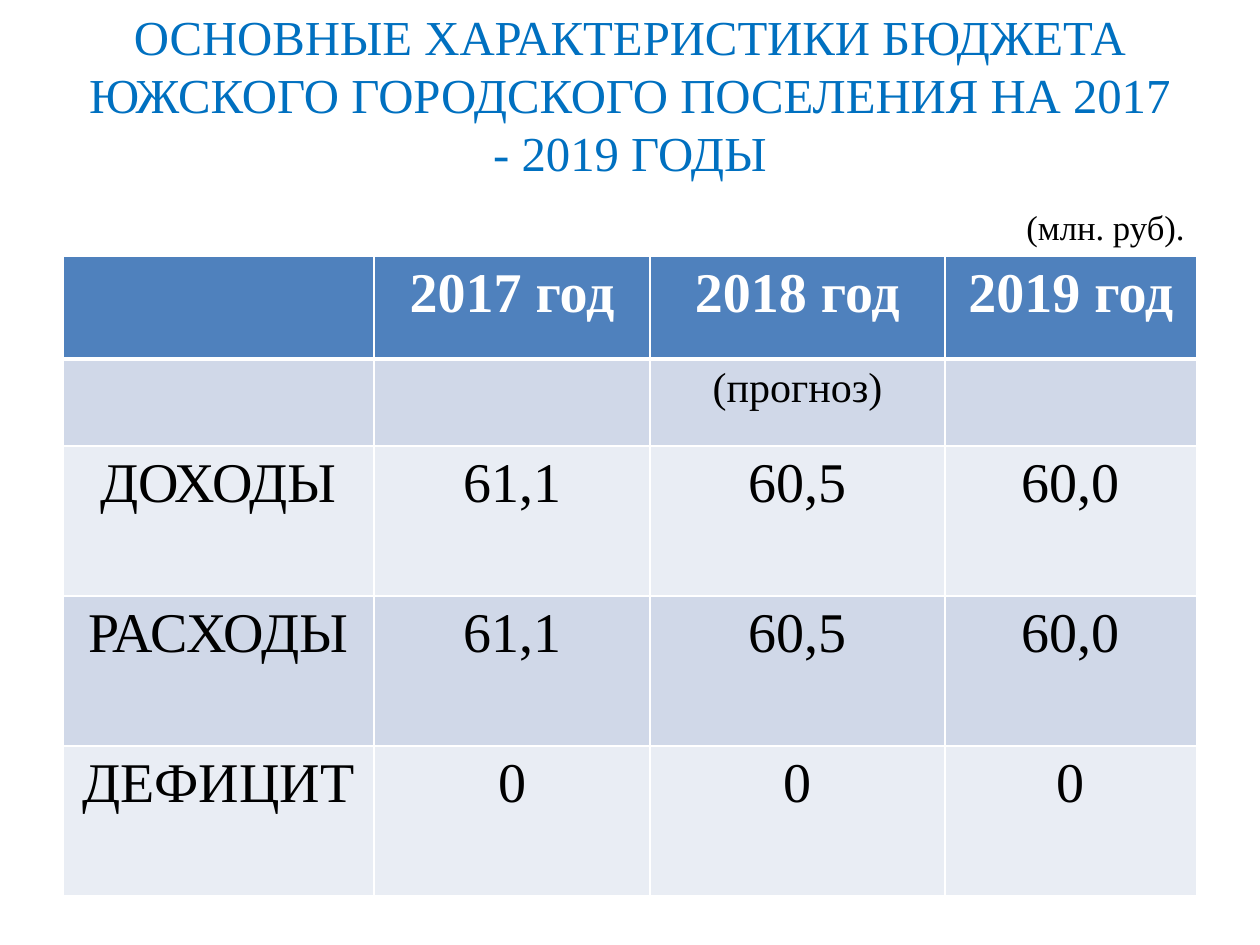
"""Build the budget summary slide with its heading and table."""
from dataclasses import dataclass

from lxml import etree
from pptx import Presentation
from pptx import util as u
from pptx.dml.color import RGBColor
from pptx.enum import text
from pptx.oxml.ns import qn

COLORS = {
    "title": "0070C0",
    "text": "000000",
    "white": "FFFFFF",
    "header": "4F81BD",
    "dark_band": "D0D8E8",
    "light_band": "E9EDF4",
}
FONT = "Times New Roman"
COLUMN_WIDTHS = (2.47, 2.19, 2.34, 2.0)


@dataclass(frozen=True)
class BudgetRow:
    values: tuple[str, str, str, str]
    height: float
    fill: str
    size: float = 32
    color: str = "text"
    bold: bool = False
    bottom_border: float = 1


ROWS = (
    BudgetRow(("", "2017 год", "2018 год", "2019 год"), 0.82, "header",
              color="white", bold=True, bottom_border=3),
    BudgetRow(("", "", "(прогноз)", ""), 0.69, "dark_band", size=24),
    BudgetRow(("ДОХОДЫ", "61,1", "60,5", "60,0"), 1.19, "light_band"),
    BudgetRow(("РАСХОДЫ", "61,1", "60,5", "60,0"), 1.19, "dark_band"),
    BudgetRow(("ДЕФИЦИТ", "0", "0", "0"), 1.19, "light_band"),
)


def write_text(paragraph, content: str, *, size: float, color: str = "text",
               bold: bool = False, align=text.PP_ALIGN.CENTER,
               line_spacing=None, space_before: float = 0) -> None:
    paragraph.alignment = align
    paragraph.space_before = u.Pt(space_before)
    if line_spacing:
        paragraph.line_spacing = u.Pt(line_spacing)
    if content:
        run = paragraph.add_run()
        run.text = content
        run.font.name = FONT
        run.font.size = u.Pt(size)
        run.font.bold = bold
        run.font.color.rgb = RGBColor.from_string(COLORS[color])


def set_border(cell, side: str, width: float) -> None:
    properties = cell._tc.get_or_add_tcPr()
    line = etree.SubElement(properties, qn(f"a:{side}"), w=str(u.Pt(width)))
    fill = etree.SubElement(line, qn("a:solidFill"))
    etree.SubElement(fill, qn("a:srgbClr"), val=COLORS["white"])


def draw_heading(slide) -> None:
    shape = slide.shapes.add_textbox(
        u.Inches(0.5), u.Inches(0.47), u.Inches(9), u.Inches(1.08))
    frame = shape.text_frame
    frame.word_wrap = True
    frame.auto_size = text.MSO_AUTO_SIZE.NONE
    frame.vertical_anchor = text.MSO_ANCHOR.MIDDLE
    write_text(frame.paragraphs[0],
               "ОСНОВНЫЕ ХАРАКТЕРИСТИКИ БЮДЖЕТА ЮЖСКОГО ГОРОДСКОГО "
               "ПОСЕЛЕНИЯ НА 2017 - 2019 ГОДЫ",
               size=27.9, color="title", line_spacing=33.2)
    write_text(frame.add_paragraph(), "(млн. руб).", size=19.8,
               align=text.PP_ALIGN.RIGHT, space_before=14)


def draw_table(slide, rows: tuple[BudgetRow, ...]) -> None:
    table = slide.shapes.add_table(
        len(rows), len(COLUMN_WIDTHS), u.Inches(0.5), u.Inches(2.03),
        u.Inches(sum(COLUMN_WIDTHS)),
        u.Inches(sum(row.height for row in rows))).table
    for column, width in zip(table.columns, COLUMN_WIDTHS):
        column.width = u.Inches(width)
    top_border = 1
    for index, row in enumerate(rows):
        table.rows[index].height = u.Inches(row.height)
        for cell, value in zip(table.rows[index].cells, row.values):
            write_text(cell.text_frame.paragraphs[0], value, size=row.size,
                       color=row.color, bold=row.bold)
            for side, width in (("lnL", 1), ("lnR", 1), ("lnT", top_border),
                                ("lnB", row.bottom_border)):
                set_border(cell, side, width)
            cell.fill.solid()
            cell.fill.fore_color.rgb = RGBColor.from_string(COLORS[row.fill])
        top_border = row.bottom_border


def main() -> None:
    presentation = Presentation()
    presentation.slide_width = u.Inches(10)
    presentation.slide_height = u.Inches(7.5)
    slide = presentation.slides.add_slide(presentation.slide_layouts[6])
    draw_heading(slide)
    draw_table(slide, ROWS)
    presentation.save("out.pptx")


if __name__ == "__main__":
    main()
